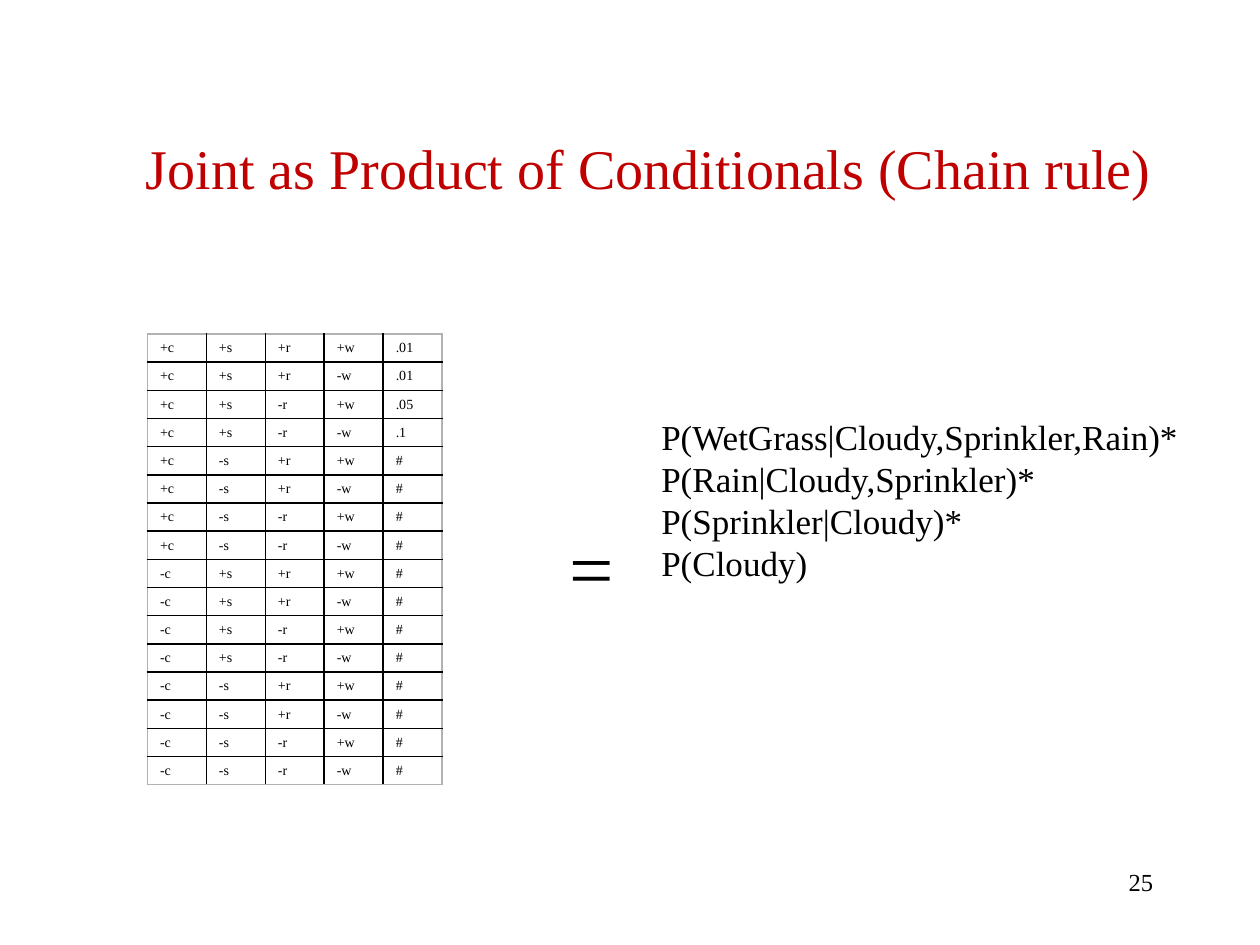
"""Build a slide that shows a joint table as a product of conditionals."""
from dataclasses import dataclass
from itertools import product

from lxml.etree import SubElement
from pptx import Presentation
from pptx.dml.color import RGBColor
from pptx.enum.text import MSO_ANCHOR, MSO_AUTO_SIZE, PP_ALIGN
from pptx.oxml.ns import qn
from pptx.util import Inches, Pt

BLACK = RGBColor(0x00, 0x00, 0x00)
RED = RGBColor(0xC0, 0x00, 0x00)
GRAY = RGBColor(0xB2, 0xB2, 0xB2)
FACE = "Times New Roman"
ODDS = [".01", ".01", ".05", ".1"] + ["#"] * 12


@dataclass
class Label:
    lines: list[str]
    box: tuple[float, float, float, float]
    size: float
    color: RGBColor = BLACK
    align: PP_ALIGN = PP_ALIGN.LEFT
    anchor: MSO_ANCHOR = MSO_ANCHOR.TOP
    wrap: bool = True
    fit: MSO_AUTO_SIZE = MSO_AUTO_SIZE.NONE


LABELS = [
    Label(["Joint as Product of Conditionals (Chain rule)"], (0.65, 0.81, 9, 1.03), 32,
          RED, PP_ALIGN.CENTER, MSO_ANCHOR.MIDDLE),
    Label(["25"], (7.17, 6.83, 2.08, 0.5), 14, align=PP_ALIGN.RIGHT),
    Label(["="], (4.42, 4.07, 0.57, 0.86), 45, wrap=False,
          fit=MSO_AUTO_SIZE.SHAPE_TO_FIT_TEXT),
    Label(["P(WetGrass|Cloudy,Sprinkler,Rain)*", "P(Rain|Cloudy,Sprinkler)*",
           "P(Sprinkler|Cloudy)*", "P(Cloudy)"], (5.15, 3.25, 5.67, 1.45), 20,
          fit=MSO_AUTO_SIZE.SHAPE_TO_FIT_TEXT),
]


def put(item, values: dict) -> None:
    for name, value in values.items():
        setattr(item, name, value)


def style(para, size: float, color: RGBColor) -> None:
    put(para.font, {"name": FACE, "size": Pt(size)})
    para.font.color.rgb = color


def write(slide, label: Label) -> None:
    frame = slide.shapes.add_textbox(*map(Inches, label.box)).text_frame
    frame.text = "\n".join(label.lines)
    put(frame, {"word_wrap": label.wrap, "auto_size": label.fit,
                "vertical_anchor": label.anchor})
    for para in frame.paragraphs:
        para.alignment = label.align
        style(para, label.size, label.color)


def edge(cell, side: str, color: RGBColor) -> None:
    line = SubElement(cell._tc.get_or_add_tcPr(), qn(f"a:ln{side}"), w=str(Pt(1)))
    fill = SubElement(line, qn("a:solidFill"))
    SubElement(fill, qn("a:srgbClr"), val=str(color))


def grid(slide) -> None:
    signs = product(("+c", "-c"), ("+s", "-s"), ("+r", "-r"), ("+w", "-w"))
    rows = [(*sign, odd) for sign, odd in zip(signs, ODDS)]
    high, wide = len(rows), len(rows[0])
    table = slide.shapes.add_table(high, wide, Inches(1.17), Inches(2.65),
                                   Inches(2.34), Inches(3.58)).table
    put(table, {"first_row": False, "horz_banding": False})
    for (y, row), x in product(enumerate(rows), range(wide)):
        cell = table.cell(y, x)
        put(cell, {"text": row[x], "margin_left": Inches(0.1), "margin_right": Inches(0.1),
                   "margin_top": Inches(0.05), "margin_bottom": Inches(0.03)})
        style(cell.text_frame.paragraphs[0], 8, BLACK)
        outer = {"L": x == 0, "R": x == wide - 1, "T": y == 0, "B": y == high - 1}
        for side, rim in outer.items():
            edge(cell, side, GRAY if rim else BLACK)
        cell.fill.background()


def main() -> None:
    deck = Presentation()
    put(deck, {"slide_width": Inches(10), "slide_height": Inches(7.5)})
    slide = deck.slides.add_slide(deck.slide_layouts[6])
    for label in LABELS[:2]:
        write(slide, label)
    grid(slide)
    for label in LABELS[2:]:
        write(slide, label)
    deck.save("out.pptx")


if __name__ == "__main__":
    main()
